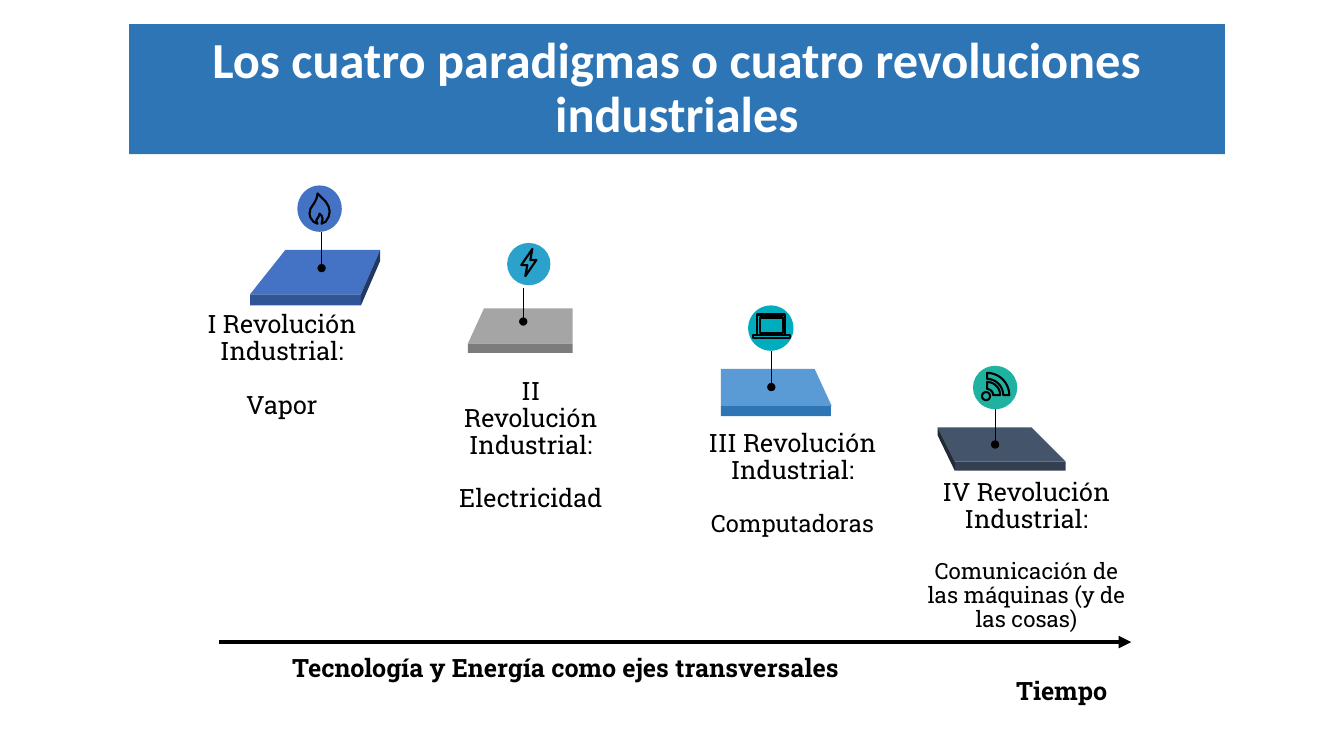
from math import cos, pi, sin

from lxml import etree
from pptx import Presentation
from pptx import util as u
from pptx.dml.color import RGBColor
from pptx.enum import shapes, text
from pptx.oxml.ns import qn

PX = 9144
COLORS = {
    "black": "000000", "white": "FFFFFF", "banner": "2E75B6",
    "steam": "4472C4", "steam_front": "2F5597", "steam_side": "203864",
    "electric": "A5A5A5", "electric_front": "7C7C7C", "electric_badge": "2AA2CB",
    "computer": "5B9BD5", "computer_front": "2E75B6", "computer_badge": "00ADBF",
    "network": "44546A", "network_front": "333F50", "network_side": "222A35",
    "network_badge": "20B2A1",
}
BODY_FONT = "Roboto Slab"


def rgb(name):
    return RGBColor.from_string(COLORS[name])


def px(*values):
    return [u.Emu(round(v * PX)) for v in values]


def paint(sp, fill=None, line_width=None):
    sp.shadow.inherit = False
    if fill:
        sp.fill.solid()
        sp.fill.fore_color.rgb = rgb(fill)
    else:
        sp.fill.background()
    if line_width:
        sp.line.color.rgb = rgb("black")
        sp.line.width = u.Pt(line_width)
    else:
        sp.line.fill.background()


def add_preset(s, kind, box, fill):
    paint(s.shapes.add_shape(kind, *px(*box)), fill)


def add_outline(s, contours, fill=None, line_width=None):
    builder = s.shapes.build_freeform(*px(*contours[0][0]), scale=1.0)
    for i, points in enumerate(contours):
        if i:
            builder.move_to(*px(*points[0]))
        builder.add_line_segments([px(*pt) for pt in points[1:]], close=True)
    paint(builder.convert_to_shape(), fill, line_width)


def add_line(s, start, end, width, tail):
    cn = s.shapes.add_connector(shapes.MSO_CONNECTOR.STRAIGHT, *px(*start, *end))
    cn.line.color.rgb = rgb("black")
    cn.line.width = u.Pt(width)
    etree.SubElement(cn.line._get_or_add_ln(), qn("a:tailEnd"), type=tail)
    etree.SubElement(cn._element.spPr, qn("a:effectLst"))


def add_text(s, box, lines, wrap=True, bold=False):
    tf = s.shapes.add_textbox(*px(*box)).text_frame
    tf.word_wrap = wrap
    tf.auto_size = text.MSO_AUTO_SIZE.SHAPE_TO_FIT_TEXT
    for i, (line, size) in enumerate(lines):
        p = tf.paragraphs[0] if i == 0 else tf.add_paragraph()
        p.text = line
        p.font.name = BODY_FONT
        p.font.size = u.Pt(size)
        p.font.bold = bold
        p.font.color.rgb = rgb("black")
    return tf


def add_label(s, box, heading, topic, topic_size):
    tf = add_text(s, box, [(heading, 18), (topic, topic_size)])
    tf.margin_left, tf.margin_top, tf.margin_right, tf.margin_bottom = px(6, 5, 6, 3)
    for p in tf.paragraphs:
        p.alignment = text.PP_ALIGN.CENTER
        p.line_spacing = 0.89
    tf.paragraphs[1].space_before = u.Pt(19)


def add_title(s, title):
    sp = s.shapes.title
    sp.left, sp.top, sp.width, sp.height = px(128, 24, 1087, 129)
    sp.fill.solid()
    sp.fill.fore_color.rgb = rgb("banner")
    tf = sp.text_frame
    tf.text = title
    tf.word_wrap = True
    tf.auto_size = text.MSO_AUTO_SIZE.NONE
    tf.vertical_anchor = text.MSO_ANCHOR.MIDDLE
    p = tf.paragraphs[0]
    p.alignment = text.PP_ALIGN.CENTER
    p.line_spacing = 0.9
    p.font.name = "Calibri"
    p.font.size = u.Pt(36)
    p.font.bold = True
    p.font.color.rgb = rgb("white")


def rect(left, top, right, bottom):
    return [(left, top), (right, top), (right, bottom), (left, bottom)]


def arc(cx, cy, radius, start, end, steps=16):
    angles = [start + (end - start) * i / steps for i in range(steps + 1)]
    return [(cx + radius * cos(a), cy - radius * sin(a)) for a in angles]


def wave(cx, cy, inner, outer):
    return arc(cx, cy, outer, 0, pi / 2) + arc(cx, cy, inner, pi / 2, 0)


FLAME = [[(315, 222), (311, 220), (308, 216), (307, 212), (308, 207), (310, 204),
          (312, 201), (314, 197), (315, 192), (319, 196), (323, 200), (326, 205),
          (327, 210), (326, 215), (323, 220), (319, 222), (320, 217), (319, 214),
          (317, 212), (316, 215), (314, 218), (314, 220)]]
BOLT = [[(521, 274), (523, 263), (517, 263), (528, 247), (526, 258), (532, 258)]]
LAPTOP = [rect(751, 312, 779, 332), rect(754, 315, 777, 330), rect(747, 332, 784, 335)]
SIGNAL = [arc(978, 393, 4, 0, 2 * pi), wave(979, 392, 6, 13), wave(979, 392, 16, 22)]

STAGES = [
    dict(name="steam", badge_fill="steam", top=[(283, 248), (377, 248), (358, 292), (248, 292)],
         front=(248, 292, 110, 11), side=[(358, 292), (377, 248), (377, 259), (358, 303)],
         pin=(319, 230, 266), badge=(295, 184, 44, 46), icon=FLAME,
         label=((179, 305, 201, 116), "I Revolución Industrial:", "Vapor", 18)),
    dict(name="electric", badge_fill="electric_badge",
         top=[(480, 306), (568, 306), (568, 341), (464, 341)],
         front=(464, 341, 104, 9), side=None,
         pin=(519, 286, 319), badge=(503, 241, 43, 42), icon=BOLT,
         label=((445, 371, 163, 143), "II Revolución Industrial:", "Electricidad", 18)),
    dict(name="computer", badge_fill="computer_badge",
         top=[(715, 366), (808, 366), (825, 403), (715, 403)],
         front=(715, 403, 109, 10), side=None,
         pin=(765, 348, 384), badge=(742, 303, 45, 45), icon=LAPTOP,
         label=((694, 423, 184, 114), "III Revolución Industrial:", "Computadoras", 17)),
    dict(name="network", badge_fill="network_badge",
         top=[(930, 424), (1023, 424), (1057, 458), (947, 458)],
         front=(947, 458, 110, 9), side=[(947, 458), (947, 467), (930, 432), (930, 424)],
         pin=(987, 404, 441), badge=(965, 363, 44, 43), icon=SIGNAL,
         label=((913, 471, 210, 161), "IV Revolución Industrial:",
                "Comunicación de las máquinas (y de las cosas)", 16)),
]


def add_stage(s, stage):
    name = stage["name"]
    add_outline(s, [stage["top"]], name)
    add_preset(s, shapes.MSO_SHAPE.RECTANGLE, stage["front"], name + "_front")
    if stage["side"]:
        add_outline(s, [stage["side"]], name + "_side")
    add_label(s, *stage["label"])
    x, start, end = stage["pin"]
    add_line(s, (x, start), (x, end), 0.75, "oval")
    add_preset(s, shapes.MSO_SHAPE.OVAL, stage["badge"], stage["badge_fill"])
    add_outline(s, stage["icon"], line_width=1.5)


def main():
    prs = Presentation()
    prs.slide_width, prs.slide_height = px(1333, 750)
    s = prs.slides.add_slide(prs.slide_layouts[5])
    add_title(s, "Los cuatro paradigmas o cuatro revoluciones industriales")
    for stage in STAGES:
        add_stage(s, stage)
    add_text(s, (280, 642, 697, 40),
             [("Tecnología y Energía como ejes transversales", 18)], bold=True)
    add_line(s, (217, 637), (1122, 637), 3, "triangle")
    add_text(s, (998, 665, 119, 40), [("Tiempo", 18)], wrap=False, bold=True)
    prs.save("out.pptx")


if __name__ == "__main__":
    main()
